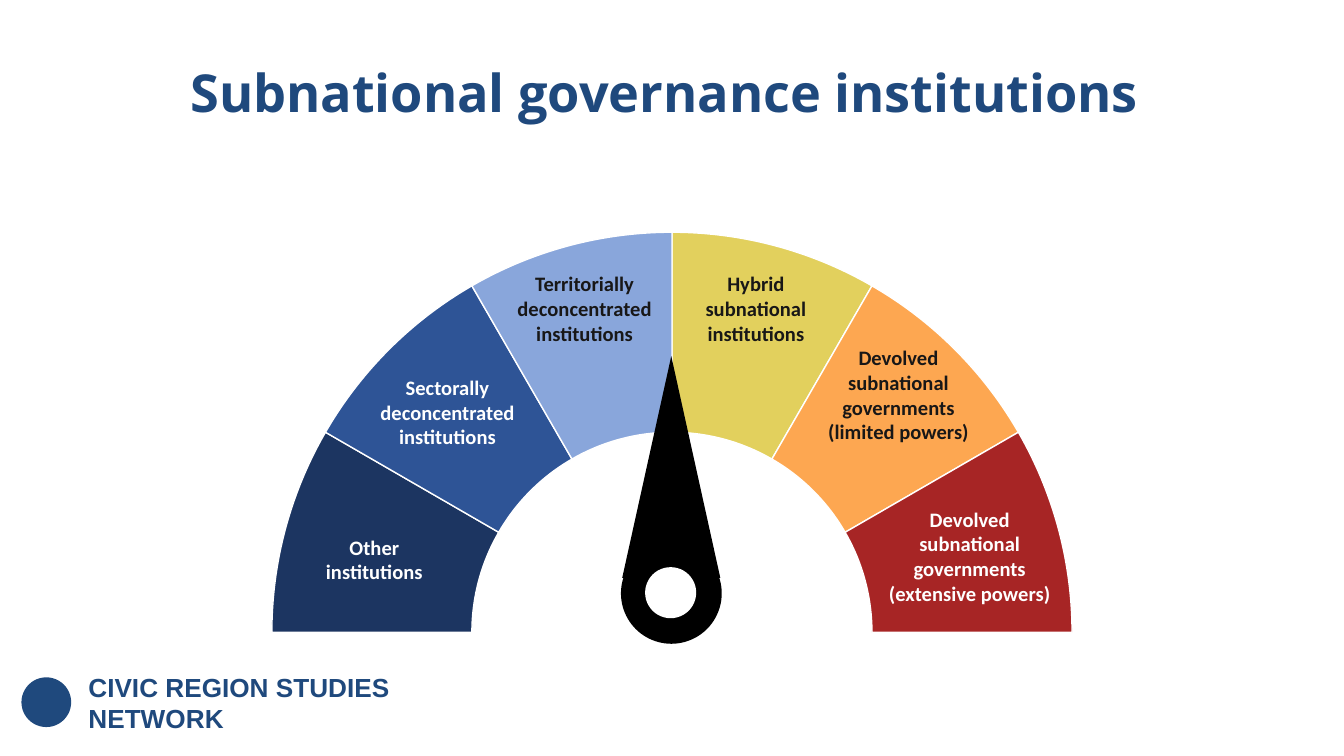
from pptx import Presentation
from pptx import util as u
from pptx.chart import data as chart_data
from pptx.dml import color
from pptx.enum import chart as charts, shapes, text

COLORS = {
    "white": "FFFFFF", "black": "000000", "ink": "181717", "brand": "1F497D",
    "navy": "1C3561", "blue": "2E5496", "sky": "89A6DB",
    "yellow": "E2D05D", "orange": "FDA751", "red": "A72525",
}


def add_text(page, place, lines, font_format, inset=None, para_format=None):
    box = page.shapes.add_textbox(*map(u.Inches, place))
    frame = box.text_frame
    frame.word_wrap = True
    if inset is not None:
        for side in ("left", "right", "top", "bottom"):
            setattr(frame, f"margin_{side}", u.Inches(inset))
    for number, line in enumerate(lines):
        para = frame.paragraphs[0] if number == 0 else frame.add_paragraph()
        for name, value in (para_format or {}).items():
            setattr(para, name, value)
        span = para.add_run()
        span.text = line
        for name, value in font_format.items():
            if name == "color":
                span.font.color.rgb = color.RGBColor.from_string(COLORS[value])
            else:
                setattr(span.font, name, value)
    return box


def add_solid(page, kind, place, fill):
    shape = page.shapes.add_shape(kind, *map(u.Inches, place))
    shape.shadow.inherit = False
    shape.fill.solid()
    shape.fill.fore_color.rgb = color.RGBColor.from_string(COLORS[fill])
    shape.line.fill.background()
    return shape


deck = Presentation()
deck.slide_width = u.Inches(10)
deck.slide_height = u.Inches(10) * 9 // 16
page = deck.slides.add_slide(deck.slide_layouts[6])

segments = ["yellow", "orange", "red"] + [None] * 6 + ["navy", "blue", "sky"]
gauge_data = chart_data.CategoryChartData()
gauge_data.categories = [str(number) for number in range(1, len(segments) + 1)]
gauge_data.add_series("Series 1", [8] * len(segments))
gauge = page.shapes.add_chart(
    charts.XL_CHART_TYPE.DOUGHNUT, *map(u.Inches, (0.71, 1.59, 8.58, 6.23)), gauge_data
).chart
gauge.has_legend = False
gauge.has_title = False
gauge.font.name = "Calibri"
gauge.font.size = u.Pt(10)
gauge.font.color.rgb = color.RGBColor.from_string(COLORS["black"])
gauge.plots[0].vary_by_categories = True
gauge._chartSpace.xpath("//c:holeSize")[0].set("val", "49")
for number, fill in enumerate(segments):
    look = gauge.series[0].points[number].format
    if fill:
        look.fill.solid()
        look.fill.fore_color.rgb = color.RGBColor.from_string(COLORS[fill])
        look.line.color.rgb = color.RGBColor.from_string(COLORS["white"])
        look.line.width = u.Pt(0.75)
    else:
        look.fill.background()
        look.line.fill.background()

needle = [
    (shapes.MSO_SHAPE.OVAL, (4.62, 4.04, 0.75, 0.75), "black"),
    (shapes.MSO_SHAPE.ISOSCELES_TRIANGLE, (4.63, 2.65, 0.73, 1.65), "black"),
    (shapes.MSO_SHAPE.OVAL, (4.8, 4.22, 0.38, 0.38), "white"),
]
for kind, place, fill in needle:
    add_solid(page, kind, place, fill)

labels = [
    ((6.47, 3.72, 1.49, 0.84), ["Devolved", "subnational governments (extensive powers)"], "white"),
    ((5.94, 2.52, 1.49, 0.84), ["Devolved", "subnational governments", "(limited powers)"], "ink"),
    ((5.01, 1.97, 1.23, 0.66), ["Hybrid", "subnational institutions"], "ink"),
    ((3.7, 1.97, 1.3, 0.66), ["Territorially", "deconcentrated institutions"], "ink"),
    ((2.68, 2.74, 1.3, 0.66), ["Sectorally", "deconcentrated institutions"], "white"),
    ((2.04, 3.93, 1.49, 0.47), ["Other", "institutions"], "white"),
]
centered = {"alignment": text.PP_ALIGN.CENTER}
for place, lines, ink in labels:
    label_font = {"name": "Calibri", "size": u.Pt(11), "bold": True, "color": ink}
    label = add_text(page, place, lines, label_font, para_format=centered)
    label.text_frame.auto_size = text.MSO_AUTO_SIZE.SHAPE_TO_FIT_TEXT

footer_font = {"name": "Arial", "size": u.Pt(14), "bold": True, "color": "brand"}
footer = add_text(page, (0.56, 4.94, 3.37, 0.62), ["CIVIC REGION STUDIES", "NETWORK"],
                  footer_font, inset=0.1)
footer.text_frame.vertical_anchor = text.MSO_ANCHOR.BOTTOM
add_solid(page, shapes.MSO_SHAPE.OVAL, (0.16, 5.04, 0.37, 0.37), "brand")

title_font = {"name": "Open Sans", "size": u.Pt(28), "bold": True, "color": "brand"}
add_text(page, (0.54, 0.4, 8.8, 0.62), ["Subnational governance institutions"],
         title_font, inset=0.1, para_format={**centered, "line_spacing": 0.9})

deck.save("out.pptx")
